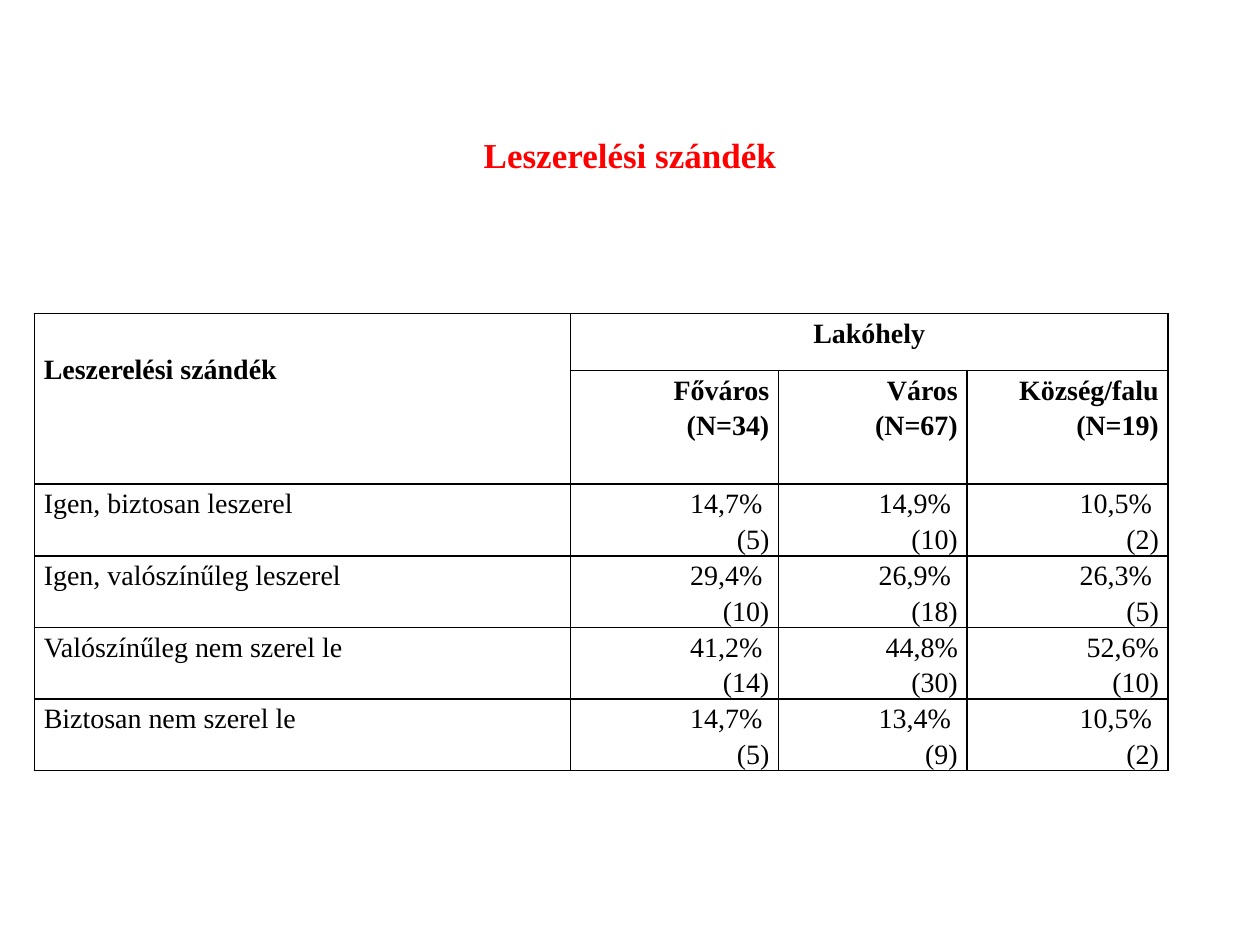
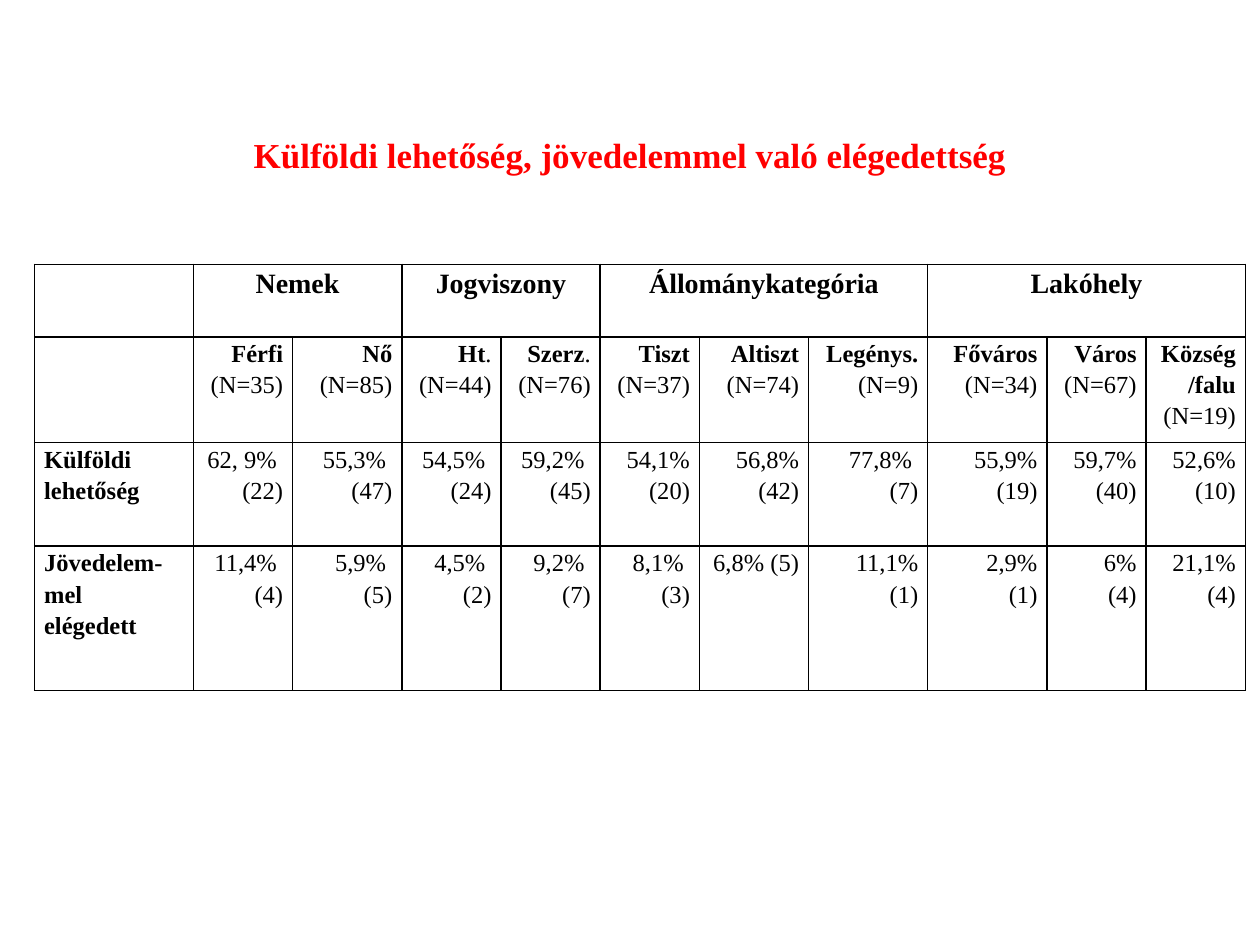
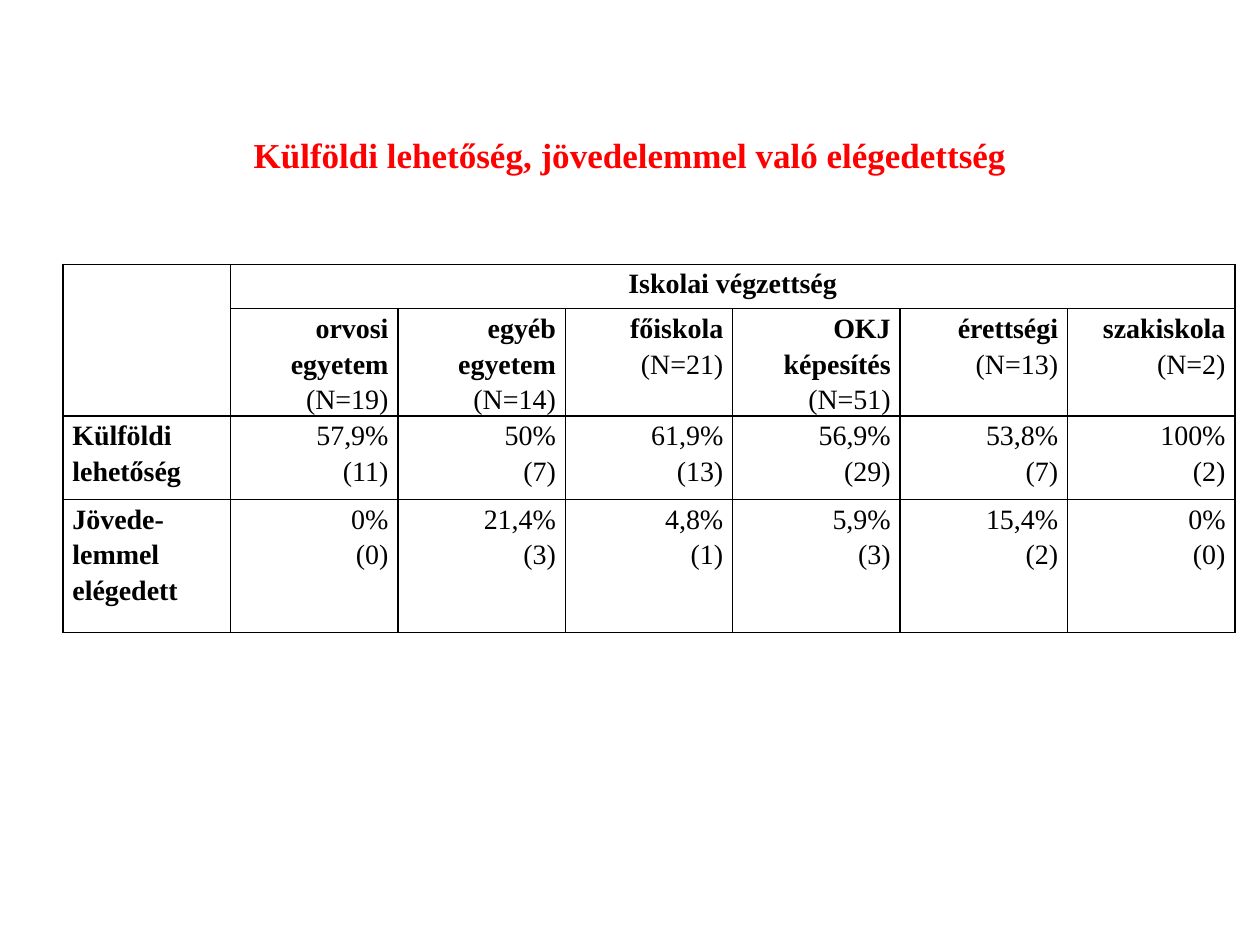
from lxml import etree
from pptx import Presentation
from pptx.dml.color import RGBColor
from pptx.enum.text import MSO_ANCHOR as ANCHOR, PP_ALIGN as ALIGN
from pptx.oxml.ns import qn
from pptx.util import Pt

FONT = "Times New Roman"
BLACK, RED = "000000", "FF0000"
CELL_INSET = 5.4
LINE_SPACING = 1.15


def rgb(value):
    return RGBColor.from_string(value)


def write_text(tf, text, size=16, color=BLACK, align=ALIGN.LEFT, spacing=None):
    """Newlines part paragraphs; *asterisks* enclose bold words."""
    for i, line in enumerate(text.split("\n")):
        p = tf.paragraphs[0] if i == 0 else tf.add_paragraph()
        p.alignment = align
        p.line_spacing = spacing
        for j, part in enumerate(line.split("*")):
            if not part:
                continue
            r = p.add_run()
            r.text = part
            r.font.name = FONT
            r.font.size = Pt(size)
            r.font.bold = j % 2 == 1
            r.font.color.rgb = rgb(color)


def add_titled_slide(prs, title):
    s = prs.slides.add_slide(prs.slide_layouts[5])
    sp = s.shapes.title
    sp.left, sp.top, sp.width, sp.height = Pt(36), Pt(65.5), Pt(648), Pt(45.4)
    sp.text_frame.vertical_anchor = ANCHOR.MIDDLE
    write_text(sp.text_frame, f"*{title}*", size=20, color=RED, align=ALIGN.CENTER)
    return s


def add_borders(cell, color=BLACK, width=1):
    tc_pr = cell._tc.get_or_add_tcPr()
    for side in ("lnL", "lnR", "lnT", "lnB"):
        ln = etree.SubElement(tc_pr, qn(f"a:{side}"), w=str(Pt(width)))
        fill = etree.SubElement(ln, qn("a:solidFill"))
        etree.SubElement(fill, qn("a:srgbClr"), val=color)


def add_grid(s, left, top, widths, heights, rows, merges, body_size=16):
    """Top row is centred, first column left, all other cells right."""
    frame = s.shapes.add_table(len(heights), len(widths), Pt(left), Pt(top),
                               Pt(sum(widths)), Pt(sum(heights)))
    table = frame.table
    table.first_row = table.horz_banding = False
    for column, width in zip(table.columns, widths):
        column.width = Pt(width)
    for row, height in zip(table.rows, heights):
        row.height = Pt(height)
    for first, last in merges:
        table.cell(*first).merge(table.cell(*last))

    for i, texts in enumerate(rows):
        for j, text in enumerate(texts):
            cell = table.cell(i, j)
            add_borders(cell)
            cell.fill.background()
            cell.margin_left = cell.margin_right = Pt(CELL_INSET)
            cell.margin_top = cell.margin_bottom = 0
            if text:
                align = ALIGN.LEFT if j == 0 else ALIGN.RIGHT if i else ALIGN.CENTER
                write_text(cell.text_frame, text, size=body_size if i else 16,
                           align=align, spacing=LINE_SPACING)
    return table


def add_discharge_slide(prs):
    s = add_titled_slide(prs, "Leszerelési szándék")
    rows = [
        ["*Leszerelési szándék*", "*Lakóhely*", "", ""],
        ["", "*Főváros*\n*(N=34)*", "*Város*\n*(N=67)*", "*Község/falu*\n*(N=19)*"],
        ["Igen, biztosan leszerel", "14,7% \n(5)", "14,9% \n(10)", "10,5% \n(2)"],
        ["Igen, valószínűleg leszerel", "29,4% \n(10)", "26,9% \n(18)", "26,3% \n(5)"],
        ["Valószínűleg nem szerel le", "41,2% \n(14)", "44,8%\n(30)", "52,6%\n(10)"],
        ["Biztosan nem szerel le", "14,7% \n(5)", "13,4% \n(9)", "10,5% \n(2)"],
    ]
    table = add_grid(s, 19.7, 179.2, [306.2, 119.1, 107.7, 114.9],
                     [32.5, 65] + [40.7] * 4, rows,
                     merges=[((0, 0), (1, 0)), ((0, 1), (0, 3))])
    table.cell(0, 0).margin_top = Pt(20.5)  # label sits one line down


def add_groups_slide(prs, title):
    s = add_titled_slide(prs, title)
    rows = [
        ["", "*Nemek*", "", "*Jogviszony*", "", "*Állománykategória*", "", "",
         "*Lakóhely*", "", ""],
        ["", "*Férfi *(N=35)", "*Nő* (N=85)", "*Ht*.\n(N=44)", "*Szerz*.\n(N=76)",
         "*Tiszt*\n(N=37)", "*Altiszt*\n(N=74)", "*Legénys.*\n(N=9)",
         "*Főváros*\n(N=34)", "*Város*\n(N=67)", "*Község *\n*/falu*\n(N=19)"],
        ["*Külföldi lehetőség*", "62, 9% \n(22)", "55,3% \n(47)", "54,5% \n(24)",
         "59,2% \n(45)", "54,1% (20)", "56,8% (42)", "77,8% \n(7)",
         "55,9%\n(19)", "59,7%\n(40)", "52,6%\n(10)"],
        ["*Jövedelem-mel*\n*elégedett*", "11,4% \n(4)", "5,9% \n(5)", "4,5% \n(2)",
         "9,2% \n(7)", "8,1% \n(3)", "6,8% (5)", "11,1%\n(1)",
         "2,9%\n(1)", "6%\n(4)", "21,1%\n(4)"],
    ]
    narrow, middle, wide = 56.7, 62.4, 68.1
    widths = [90.7, narrow, middle, narrow, narrow, narrow, middle, wide, wide,
              narrow, narrow]
    groups = [(1, 2), (3, 4), (5, 7), (8, 10)]
    add_grid(s, 19.8, 151, widths, [41.5, 60.5, 59.1, 82.6], rows,
             merges=[((0, a), (0, b)) for a, b in groups], body_size=14)


def add_education_slide(prs, title):
    s = add_titled_slide(prs, title)
    rows = [
        ["", "*Iskolai végzettség*"] + [""] * 5,
        ["", "*orvosi egyetem*\n(N=19)", "*egyéb egyetem*\n(N=14)", "*főiskola*\n(N=21)",
         "*OKJ képesítés*\n(N=51)", "*érettségi*\n(N=13)", "*szakiskola*\n(N=2)"],
        ["*Külföldi lehetőség*", "57,9%\n(11)", "50%\n(7)", "61,9%\n(13)",
         "56,9%\n(29)", "53,8%\n(7)", "100%\n(2)"],
        ["*Jövede-*\n*lemmel elégedett*", "0%\n(0)", "21,4%\n(3)", "4,8%\n(1)",
         "5,9%\n(3)", "15,4%\n(2)", "0%\n(0)"],
    ]
    add_grid(s, 36, 151, [95.67] * 7, [25.4, 61.2, 47.7, 75.9], rows,
             merges=[((0, 0), (1, 0)), ((0, 1), (0, 6))])


def main():
    prs = Presentation()
    prs.slide_width, prs.slide_height = Pt(720), Pt(540)
    satisfaction = "Külföldi lehetőség, jövedelemmel való elégedettség"
    add_discharge_slide(prs)
    add_groups_slide(prs, satisfaction)
    add_education_slide(prs, satisfaction)
    prs.save("out.pptx")


if __name__ == "__main__":
    main()
